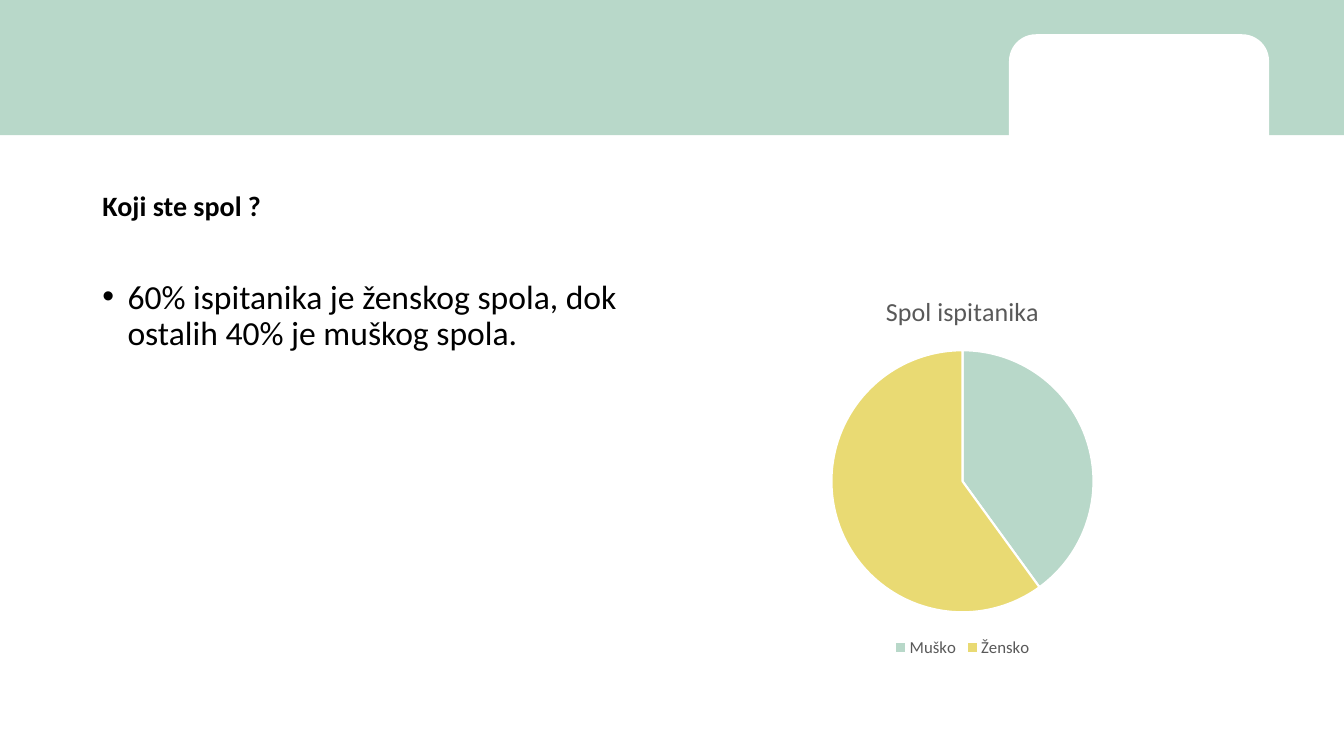
from dataclasses import dataclass

from lxml.etree import SubElement
from pptx import Presentation
from pptx.chart.data import CategoryChartData
from pptx.dml.color import RGBColor
from pptx.enum.chart import XL_CHART_TYPE, XL_LEGEND_POSITION
from pptx.enum.shapes import MSO_SHAPE
from pptx.enum.text import MSO_ANCHOR, PP_ALIGN
from pptx.oxml.ns import qn
from pptx.slide import Slide
from pptx.util import Pt


@dataclass(frozen=True)
class Theme:
    font: str = "Calibri"
    mint: RGBColor = RGBColor(0xB8, 0xD8, 0xC9)
    yellow: RGBColor = RGBColor(0xE9, 0xDA, 0x73)
    white: RGBColor = RGBColor(0xFF, 0xFF, 0xFF)
    black: RGBColor = RGBColor(0, 0, 0)
    grey: RGBColor = RGBColor(0x59, 0x59, 0x59)
    question_size: float = 20
    finding_size: float = 24
    chart_title_size: float = 18.6
    chart_size: float = 10
    legend_size: float = 12


@dataclass(frozen=True)
class Box:
    left: float
    top: float
    width: float
    height: float

    def lengths(self) -> tuple[Pt, Pt, Pt, Pt]:
        return Pt(self.left), Pt(self.top), Pt(self.width), Pt(self.height)


@dataclass(frozen=True)
class Panel:
    outline: MSO_SHAPE
    box: Box
    color: RGBColor


@dataclass(frozen=True)
class Answer:
    label: str
    percent: int
    color: RGBColor


THEME = Theme()
HEADER = (
    Panel(MSO_SHAPE.RECTANGLE, Box(0, 0, 965.5, 96.5), THEME.mint),
    Panel(MSO_SHAPE.ROUNDED_RECTANGLE, Box(720.7, 24.5, 185.8, 115.2), THEME.white),
)
ANSWERS = (
    Answer("Muško", 40, THEME.mint),
    Answer("Žensko", 60, THEME.yellow),
)
QUESTION_BOX = Box(66, 131, 828, 31.5)
FINDING_BOX = Box(66, 196.5, 394, 289.5)
CHART_BOX = Box(481, 196.5, 413, 276)
BULLET_INDENT = 18


def style_font(font, size: float, color: RGBColor, bold: bool = False) -> None:
    font.name = THEME.font
    font.size = Pt(size)
    font.color.rgb = color
    font.bold = bold


def add_panel(slide: Slide, panel: Panel) -> None:
    shape = slide.shapes.add_shape(panel.outline, *panel.box.lengths())
    shape.shadow.inherit = False
    shape.fill.solid()
    shape.fill.fore_color.rgb = panel.color
    shape.line.fill.background()


def set_question(slide: Slide, question: str) -> None:
    title = slide.shapes.title
    title.left, title.top, title.width, title.height = QUESTION_BOX.lengths()
    title.text_frame.text = question
    title.text_frame.vertical_anchor = MSO_ANCHOR.MIDDLE
    paragraph = title.text_frame.paragraphs[0]
    paragraph.alignment = PP_ALIGN.LEFT
    style_font(paragraph.font, THEME.question_size, THEME.black, bold=True)


def add_finding(slide: Slide, finding: str) -> None:
    frame = slide.shapes.add_textbox(*FINDING_BOX.lengths()).text_frame
    frame.word_wrap = True
    frame.text = finding
    paragraph = frame.paragraphs[0]
    paragraph.line_spacing = 0.9
    paragraph.space_before = Pt(10)
    style_font(paragraph.font, THEME.finding_size, THEME.black)
    properties = paragraph._p.get_or_add_pPr()
    properties.set("marL", str(Pt(BULLET_INDENT)))
    properties.set("indent", str(-Pt(BULLET_INDENT)))
    bullet_font = properties.makeelement(qn("a:buFont"), {"typeface": "Arial"})
    properties.find(qn("a:defRPr")).addprevious(bullet_font)
    bullet = properties.makeelement(qn("a:buChar"), {"char": "•"})
    bullet_font.addnext(bullet)


def add_answer_chart(slide: Slide, heading: str) -> None:
    data = CategoryChartData()
    data.categories = [answer.label for answer in ANSWERS]
    data.add_series(heading, [answer.percent for answer in ANSWERS])
    chart = slide.shapes.add_chart(
        XL_CHART_TYPE.PIE, *CHART_BOX.lengths(), data
    ).chart
    style_font(chart.font, THEME.chart_size, THEME.black)

    chart.has_title = True
    chart.chart_title.include_in_layout = False
    chart.chart_title.text_frame.text = heading
    heading_font = chart.chart_title.text_frame.paragraphs[0].font
    style_font(heading_font, THEME.chart_title_size, THEME.grey)

    chart.has_legend = True
    chart.legend.position = XL_LEGEND_POSITION.BOTTOM
    chart.legend.include_in_layout = False
    style_font(chart.legend.font, THEME.legend_size, THEME.grey)

    pie = chart.plots[0]
    pie.vary_by_categories = True
    for index, answer in enumerate(ANSWERS):
        slice_format = pie.series[0].points[index].format
        slice_format.fill.solid()
        slice_format.fill.fore_color.rgb = answer.color
        slice_format.line.color.rgb = THEME.white
        slice_format.line.width = Pt(1.5)


def main() -> None:
    presentation = Presentation()
    presentation.slide_width = Pt(960)
    presentation.slide_height = Pt(540)
    title_only = presentation.slide_layouts[5]
    slide = presentation.slides.add_slide(title_only)
    for panel in HEADER:
        add_panel(slide, panel)
    set_question(slide, "Koji ste spol ?")
    add_finding(
        slide, "60% ispitanika je ženskog spola, dok ostalih 40% je muškog spola."
    )
    add_answer_chart(slide, "Spol ispitanika")
    presentation.save("out.pptx")


if __name__ == "__main__":
    main()
